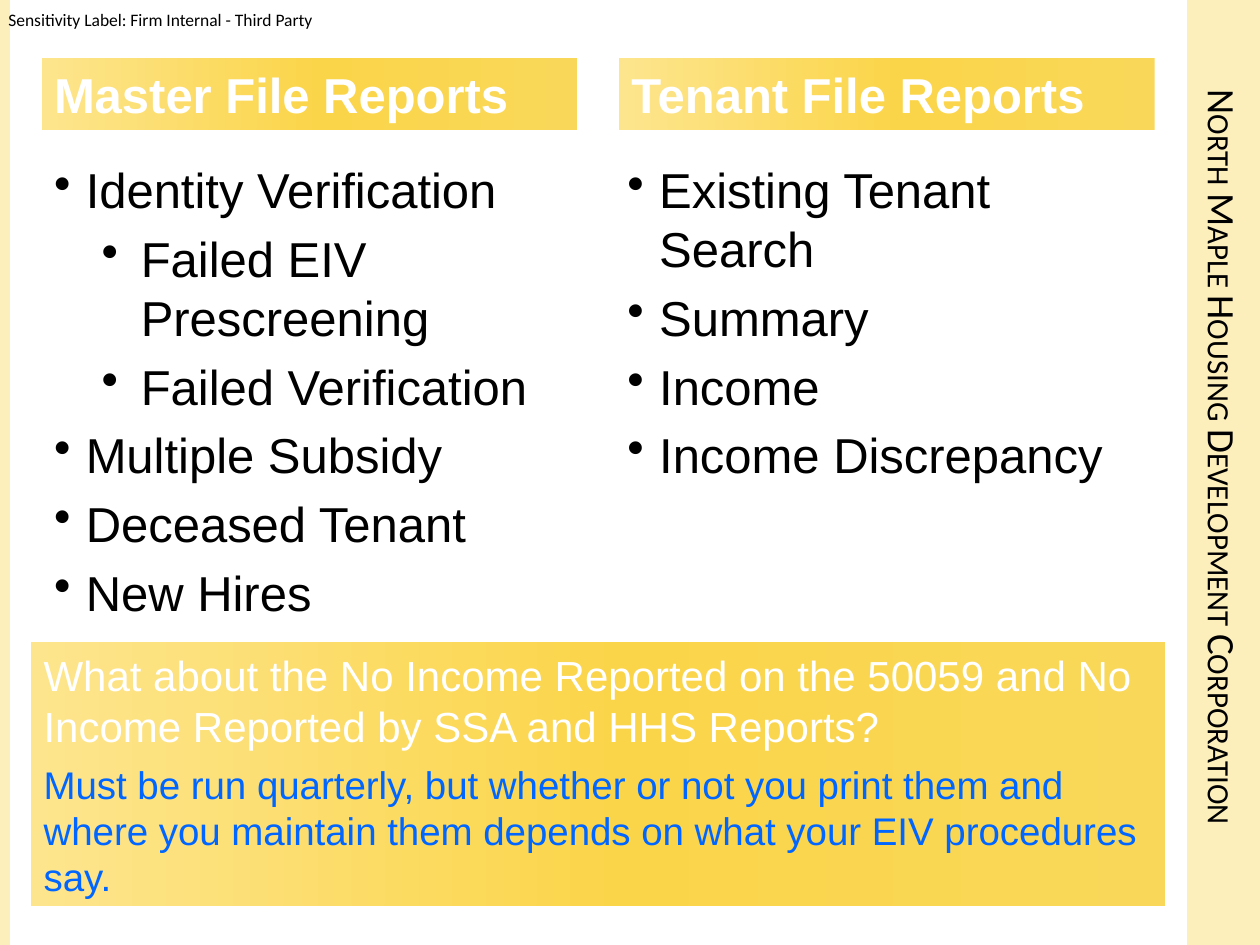
from copy import deepcopy

from pptx import Presentation
from pptx.dml.color import RGBColor
from pptx.enum.shapes import MSO_SHAPE as Shape
from pptx.enum.text import MSO_ANCHOR as Anchor, PP_ALIGN as Align
from pptx.oxml.ns import qn
from pptx.oxml.xmlchemy import OxmlElement
from pptx.util import Cm, Pt

COLORS = {
    "band": "FCEFBC",
    "black": "000000",
    "white": "FFFFFF",
    "blue": "0066FF",
}
GOLD = [(0, "F9D859"), (0.48, "FBD549"), (1, "FDE58E")]


def add_span(para, text, size, color, font="Arial", bold=False):
    span = para.add_run()
    span.text = text
    span.font.name = font
    span.font.size = Pt(size)
    span.font.bold = bold
    span.font.color.rgb = RGBColor.from_string(COLORS[color])
    return span


def add_panel(left, top, width, height):
    """Add a borderless, shadowless rectangle, measured in cm."""
    panel = page.shapes.add_shape(
        Shape.RECTANGLE, Cm(left), Cm(top), Cm(width), Cm(height))
    panel.shadow.inherit = False
    panel.line.fill.background()
    return panel


deck = Presentation()
deck.slide_width, deck.slide_height = Cm(25.4), Cm(19.05)
page = deck.slides.add_slide(deck.slide_layouts[6])

# Side bands
for left, width in [(23.93, 1.47), (0, 0.2)]:
    band = add_panel(left, 0, width, 19.05)
    band.fill.solid()
    band.fill.fore_color.rgb = RGBColor.from_string(COLORS["band"])

# Sensitivity label
box = page.shapes.add_textbox(Cm(0.17), Cm(0.18), Cm(6.25), Cm(0.43))
frame = box.text_frame
frame.margin_left = frame.margin_right = 0
frame.margin_top = frame.margin_bottom = 0
frame.word_wrap = False
add_span(frame.paragraphs[0], "Sensitivity Label: Firm Internal - Third Party",
         10, "black", "Calibri")

# Vertical organisation name
box = page.shapes.add_textbox(Cm(23.93), Cm(1.07), Cm(1.47), Cm(16.3))
frame = box.text_frame
frame.word_wrap = True
frame.vertical_anchor = Anchor.MIDDLE
frame._txBody.bodyPr.set("vert", "vert")
para = frame.paragraphs[0]
para.alignment = Align.CENTER
span = add_span(para, "North Maple Housing Development Corporation",
                22.2, "black", "Calibri")
span.font._element.set("cap", "small")

# Gold panels: left, top, width, height, text, size, colour, bold, anchor
panels = [
    (12.48, 1.17, 10.8, 1.45, "Tenant File Reports",
     28, "white", True, Anchor.TOP),
    (0.84, 1.18, 10.8, 1.45, "Master File Reports",
     28, "white", True, Anchor.TOP),
    (0.63, 12.95, 22.86, 2.31,
     "What about the No Income Reported on the 50059 and No Income "
     "Reported by SSA and HHS Reports?", 24, "white", False, Anchor.BOTTOM),
    (0.63, 15.19, 22.86, 3.07,
     "Must be run quarterly, but whether or not you print them and where you "
     "maintain them depends on what your EIV procedures say.",
     22, "blue", False, Anchor.BOTTOM),
]
for left, top, width, height, text, size, color, bold, anchor in panels:
    panel = add_panel(left, top, width, height)
    panel.fill.gradient()
    panel.fill.gradient_angle = 180
    stop_list = panel._element.spPr.find(qn("a:gradFill")).find(qn("a:gsLst"))
    stop_list.append(deepcopy(stop_list[0]))
    for stop, (position, shade) in zip(panel.fill.gradient_stops, GOLD):
        stop.position = position
        stop.color.rgb = RGBColor.from_string(shade)
    frame = panel.text_frame
    frame.word_wrap = True
    frame.vertical_anchor = anchor
    para = frame.paragraphs[0]
    para.alignment = Align.LEFT
    add_span(para, text, size, color, bold=bold)

# Bulleted lists: left, height, (level, text) items
lists = [
    (0.84, 14.6, [
        (0, "Identity Verification"),
        (1, "Failed EIV Prescreening"),
        (1, "Failed Verification"),
        (0, "Multiple Subsidy"),
        (0, "Deceased Tenant"),
        (0, "New Hires"),
    ]),
    (12.4, 13.54, [
        (0, "Existing Tenant Search"),
        (0, "Summary"),
        (0, "Income"),
        (0, "Income Discrepancy"),
    ]),
]
INDENTS = [(0.64, -0.64), (1.75, -0.79)]
for left, height, items in lists:
    box = page.shapes.add_textbox(Cm(left), Cm(3.1), Cm(11), Cm(height))
    frame = box.text_frame
    frame.word_wrap = True
    for index, (level, text) in enumerate(items):
        para = frame.add_paragraph() if index else frame.paragraphs[0]
        para.level = level
        if index:
            para.space_before = Pt(5.6)
        margin, hanging = INDENTS[level]
        props = para._p.get_or_add_pPr()
        props.set("marL", str(Cm(margin)))
        props.set("indent", str(Cm(hanging)))
        bullet = OxmlElement("a:buChar")
        bullet.set("char", "•")
        props.append(bullet)
        add_span(para, text, 28, "black")

deck.save("out.pptx")
